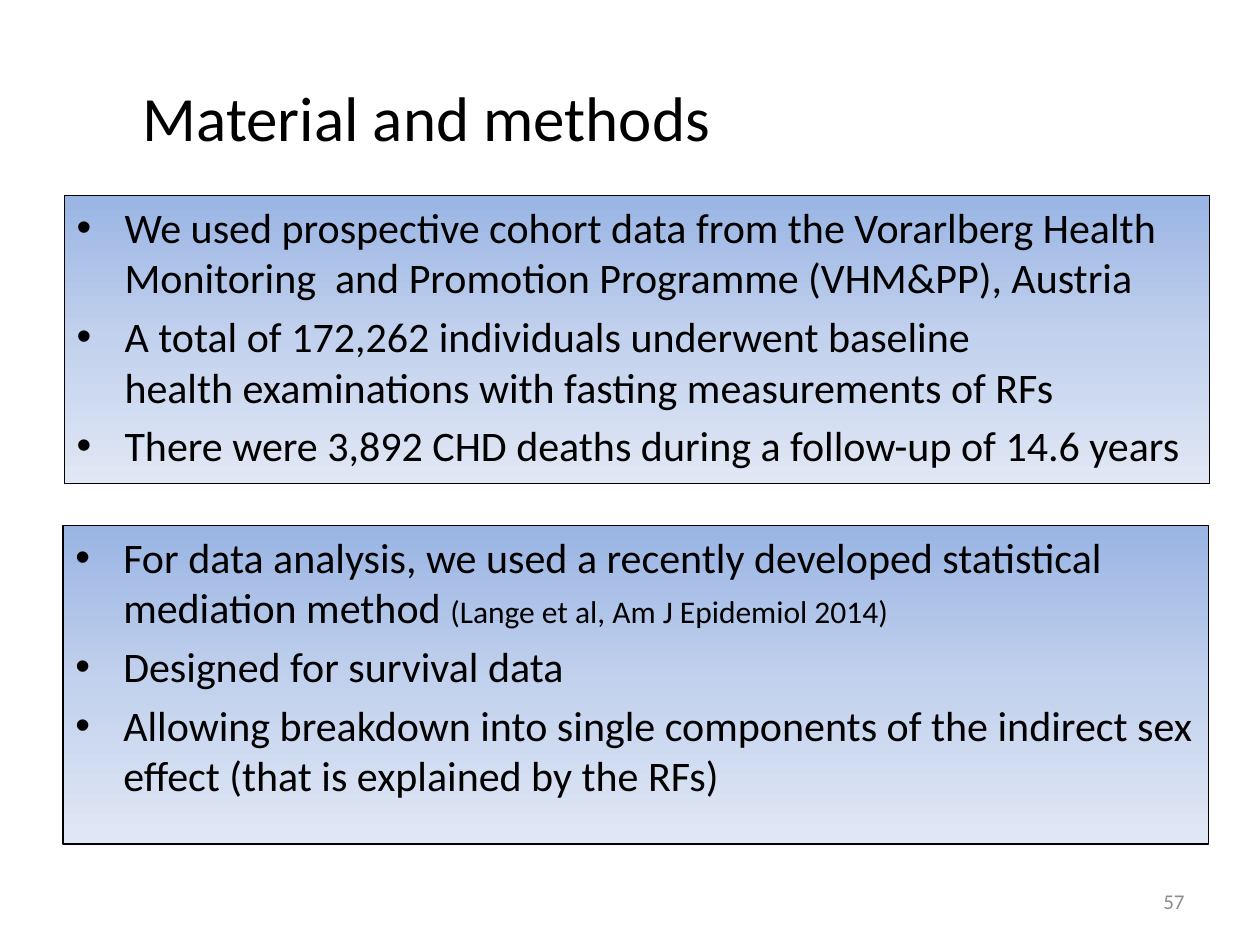
from copy import deepcopy
from lxml.etree import SubElement
from pptx import Presentation
from pptx.dml.color import RGBColor
from pptx.enum.shapes import MSO_SHAPE as Shape
from pptx.enum.text import MSO_ANCHOR as Anchor, PP_ALIGN as Align
from pptx.oxml.ns import qn
from pptx.util import Inches, Pt


def tint(code):
    return RGBColor.from_string(code)


class Deck:
    """Holds the style and the current slide."""

    font = "Calibri"
    ink = "000000"
    shades = [(0, "9AB5E4"), (0.5, "C2D1ED"), (1, "E1E8F5")]

    def __init__(self):
        self.file = Presentation()
        self.file.slide_width, self.file.slide_height = Inches(10), Inches(7.5)
        self.slide = self.file.slides.add_slide(self.file.slide_layouts[6])

    def style(self, para, size, color):
        para.font.name = self.font
        para.font.size = Pt(size)
        para.font.color.rgb = tint(color)

    def label(self, area, text, size, align, color=ink):
        box = self.slide.shapes.add_textbox(*map(Inches, area))
        frame = box.text_frame
        frame.word_wrap = True
        frame.vertical_anchor = Anchor.MIDDLE
        para = frame.paragraphs[0]
        para.text = text
        para.alignment = align
        self.style(para, size, color)

    def shade(self, fill):
        fill.gradient()
        fill.gradient_angle = 270
        stops = fill._xPr.find(".//" + qn("a:gsLst"))
        stops.insert(1, deepcopy(stops[0]))
        for stop, (place, color) in zip(fill.gradient_stops, self.shades):
            stop.position = place
            stop.color.rgb = tint(color)

    def bullet(self, para, text, note=""):
        para.text = text
        para.alignment = Align.LEFT
        props = para._p.get_or_add_pPr()
        props.set("marL", str(Inches(0.38)))
        props.set("indent", str(Inches(-0.38)))
        SubElement(props, qn("a:buFont"), typeface="Arial")
        SubElement(props, qn("a:buChar"), char="•")
        self.style(para, 24, self.ink)
        if note:
            run = para.add_run()
            run.text = note
            run.font.size = Pt(18)

    def panel(self, area, items):
        box = self.slide.shapes.add_shape(Shape.RECTANGLE, *map(Inches, area))
        box.shadow.inherit = False
        self.shade(box.fill)
        box.line.color.rgb = tint(self.ink)
        box.line.width = Pt(0.75)
        frame = box.text_frame
        frame.word_wrap = True
        frame.vertical_anchor = Anchor.TOP
        for i, item in enumerate(items):
            para = frame.add_paragraph() if i else frame.paragraphs[0]
            para.space_before = Pt(4.8 if i else 0)
            self.bullet(para, *item)


def main():
    deck = Deck()
    deck.label((0, 0.3, 6.77, 1.25), "Material and methods", 36, Align.CENTER)
    deck.panel((0.51, 1.55, 9.09, 2.29), [
        ("We used prospective cohort data from the Vorarlberg Health "
         "Monitoring  and Promotion Programme (VHM&PP), Austria",),
        ("A total of 172,262 individuals underwent baseline\v"
         "health examinations with fasting measurements of RFs",),
        ("There were 3,892 CHD deaths during a follow-up of 14.6 years",),
    ])
    deck.panel((0.5, 4.17, 9.09, 2.53), [
        ("For data analysis, we used a recently developed statistical "
         "mediation method ", "(Lange et al, Am J Epidemiol 2014)"),
        ("Designed for survival data",),
        ("Allowing breakdown into single components of the indirect sex "
         "effect (that is explained by the RFs)",),
    ])
    deck.label((7.17, 6.95, 2.33, 0.4), "57", 12, Align.RIGHT, "8C8C8C")
    deck.file.save("out.pptx")


if __name__ == "__main__":
    main()
